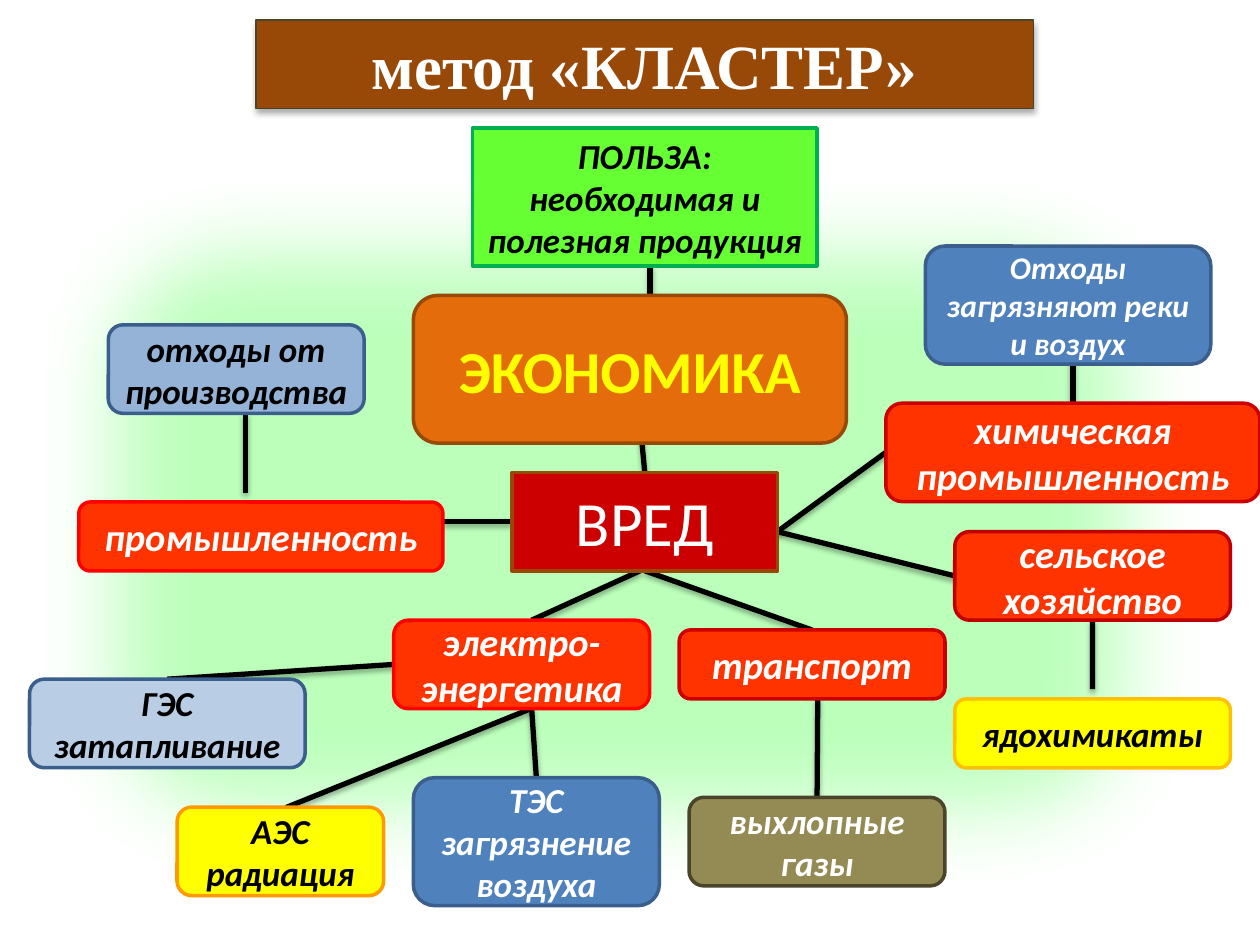
"""Build a cluster diagram of the economy, its benefit and its harm."""
from typing import NamedTuple, Optional

from lxml.etree import SubElement
from pptx import Presentation
from pptx.dml.color import RGBColor
from pptx.enum.shapes import MSO_CONNECTOR as Conn, MSO_SHAPE as Form
from pptx.enum.text import MSO_ANCHOR as Anchor, PP_ALIGN as Align
from pptx.oxml.ns import qn
from pptx.util import Pt

TOP, LEFT, BOTTOM, RIGHT = range(4)
RED, BLUE, NAVY = "FF3300", "4F81BD", "3A5F8C"
BLACK, WHITE, YELLOW = "000000", "FFFFFF", "FFFF00"


class Box(NamedTuple):
    text: str
    area: tuple[float, float, float, float]
    fill: str
    edge: str
    ink: str = WHITE
    size: float = 20
    bold: bool = True
    slant: bool = True
    form: Form = Form.ROUNDED_RECTANGLE


class End(NamedTuple):
    x: float
    y: float
    box: Optional[str] = None
    side: int = TOP


class Link(NamedTuple):
    start: End
    stop: End


BOXES = {
    "chem": Box("химическая промышленность", (506.2, 230.4, 213.8, 56.2), RED, "CC0000", size=22),
    "core": Box("ЭКОНОМИКА", (236.2, 168.8, 247.5, 84.4), "E46C0A", "984807",
                YELLOW, 34, slant=False),
    "gain": Box("ПОЛЬЗА:\nнеобходимая и полезная продукция", (270, 73.2, 196.9, 78.8),
                "66FF33", "00B050", BLACK, form=Form.RECTANGLE),
    "harm": Box("ВРЕД", (292.5, 270, 151.9, 56.2), "CC0000", "984807", size=36,
                bold=False, slant=False, form=Form.RECTANGLE),
    "atom": Box("АЭС\nрадиация", (101.2, 461.2, 118.1, 50.6), YELLOW, "FF9900", BLACK),
    "waste": Box("отходы от производства", (61.9, 185.6, 146.2, 50.6), "95B3D7", NAVY, BLACK),
    "power": Box("электро-\nэнергетика", (225, 354.4, 146.2, 50.6), RED, "FF0000", size=22),
    "plant": Box("промышленность", (45, 286.9, 208.1, 39.4), RED, "FF0000", size=22),
    "cars": Box("транспорт", (388.1, 360, 151.9, 39.4), RED, "CC0000", size=22),
    "spill": Box("Отходы загрязняют реки и воздух", (528.8, 140.6, 163.1, 67.5),
                 BLUE, NAVY, size=18),
    "fumes": Box("выхлопные газы", (393.8, 455.6, 146.2, 50.6), "948A54", "4A452A"),
    "toxin": Box("ядохимикаты", (545.6, 399.4, 157.5, 39.4), YELLOW, "FFC000", BLACK),
    "farm": Box("сельское хозяйство", (545.6, 303.8, 157.5, 50.6), RED, "C00000", size=22),
    "heat": Box("ТЭС\nзагрязнение воздуха", (236.2, 444.4, 140.6, 73.1), BLUE, NAVY),
    "hydro": Box("ГЭС\nзатапливание", (16.9, 388.1, 157.5, 50.6), "B9CDE5", NAVY, BLACK),
}


def joint(name: str, side: int) -> End:
    x, y, w, h = BOXES[name].area
    spots = ((x + w / 2, y), (x, y + h / 2), (x + w / 2, y + h), (x + w, y + h / 2))
    return End(*spots[side], name, side)


FORK, BASE = End(444.2, 303.8), End(303.8, 404.8)
LINKS = (
    Link(End(613.1, 196.6), joint("chem", TOP)),
    Link(FORK, joint("chem", LEFT)),
    Link(End(303.8, 354.4), End(365.8, 326.2)),
    Link(joint("hydro", TOP), joint("power", LEFT)),
    Link(End(140.4, 236.2), End(140.4, 281.5)),
    Link(joint("harm", LEFT), End(253.4, 298.1)),
    Link(BASE, End(163.4, 461.5)),
    Link(End(467.3, 399.4), joint("fumes", TOP)),
    Link(joint("harm", BOTTOM), joint("cars", TOP)),
    Link(joint("farm", BOTTOM), End(624.3, 393.8)),
    Link(joint("farm", LEFT), FORK),
    Link(joint("heat", TOP), BASE),
    Link(End(365.8, 241.9), joint("harm", TOP)),
    Link(End(371.5, 151.9), End(371.5, 168.5)),
)


def color(code: str) -> RGBColor:
    return RGBColor.from_string(code)


def paint(shape, fill: str, edge: str, width: float) -> None:
    shape.fill.solid()
    shape.fill.fore_color.rgb = color(fill)
    shape.line.color.rgb = color(edge)
    shape.line.width = Pt(width)


def write(shape, text: str, face: str, size: float, ink: str, bold: bool, slant: bool) -> None:
    frame = shape.text_frame
    frame.text = text
    frame.word_wrap = True
    frame.vertical_anchor = Anchor.MIDDLE
    for para in frame.paragraphs:
        para.alignment = Align.CENTER
        for run in para.runs:
            font = run.font
            font.name, font.size = face, Pt(size)
            font.bold, font.italic = bold, slant
            font.color.rgb = color(ink)


def shade(shape, blur: float, drop: float, alpha: int) -> None:
    effects = SubElement(shape._element.spPr, qn("a:effectLst"))
    shadow = SubElement(effects, qn("a:outerShdw"), blurRad=str(Pt(blur)), dist=str(Pt(drop)),
                        dir="5400000", rotWithShape="0")
    tone = SubElement(shadow, qn("a:srgbClr"), val=BLACK)
    SubElement(tone, qn("a:alpha"), val=str(alpha * 1000))


def draw_glow(slide) -> None:
    glow = slide.shapes.add_shape(Form.ROUNDED_RECTANGLE, Pt(16.9), Pt(95.6), Pt(675), Pt(416.2))
    glow.fill.solid()
    glow.fill.fore_color.rgb = color("99FF99")
    glow.line.fill.background()
    props = glow._element.spPr
    tone = props.find(".//" + qn("a:srgbClr"))
    SubElement(tone, qn("a:alpha"), val="65000")
    effects = SubElement(props, qn("a:effectLst"))
    SubElement(effects, qn("a:softEdge"), rad=str(Pt(50)))


def draw_title(slide) -> None:
    title = slide.shapes.title
    title.left, title.top, title.width, title.height = map(Pt, (146.2, 11.5, 444.4, 50.4))
    paint(title, "984807", "4A452A", 0.75)
    shade(title, 3.5, 2.2, 32)
    write(title, "метод «КЛАСТЕР»", "Times New Roman", 36, WHITE, True, False)


def draw_box(slide, box: Box):
    shape = slide.shapes.add_shape(box.form, *map(Pt, box.area))
    shape.shadow.inherit = False
    paint(shape, box.fill, box.edge, 2)
    write(shape, box.text, "Calibri", box.size, box.ink, box.bold, box.slant)
    return shape


def draw_link(slide, link: Link, nodes: dict, layer: int) -> None:
    start, stop = link
    line = slide.shapes.add_connector(
        Conn.STRAIGHT, Pt(start.x), Pt(start.y), Pt(stop.x), Pt(stop.y))
    if start.box:
        line.begin_connect(nodes[start.box], start.side)
    if stop.box:
        line.end_connect(nodes[stop.box], stop.side)
    line.line.color.rgb = color(BLACK)
    line.line.width = Pt(3)
    shade(line, 3.1, 1.8, 35)
    slide.shapes._spTree.insert(layer, line._element)


def main() -> None:
    deck = Presentation()
    deck.slide_width, deck.slide_height = Pt(720), Pt(540)
    slide = deck.slides.add_slide(deck.slide_layouts[5])
    draw_glow(slide)
    draw_title(slide)
    layer = len(slide.shapes._spTree)
    nodes = {name: draw_box(slide, box) for name, box in BOXES.items()}
    for link in LINKS:
        draw_link(slide, link, nodes, layer)
    deck.save("out.pptx")


if __name__ == "__main__":
    main()
